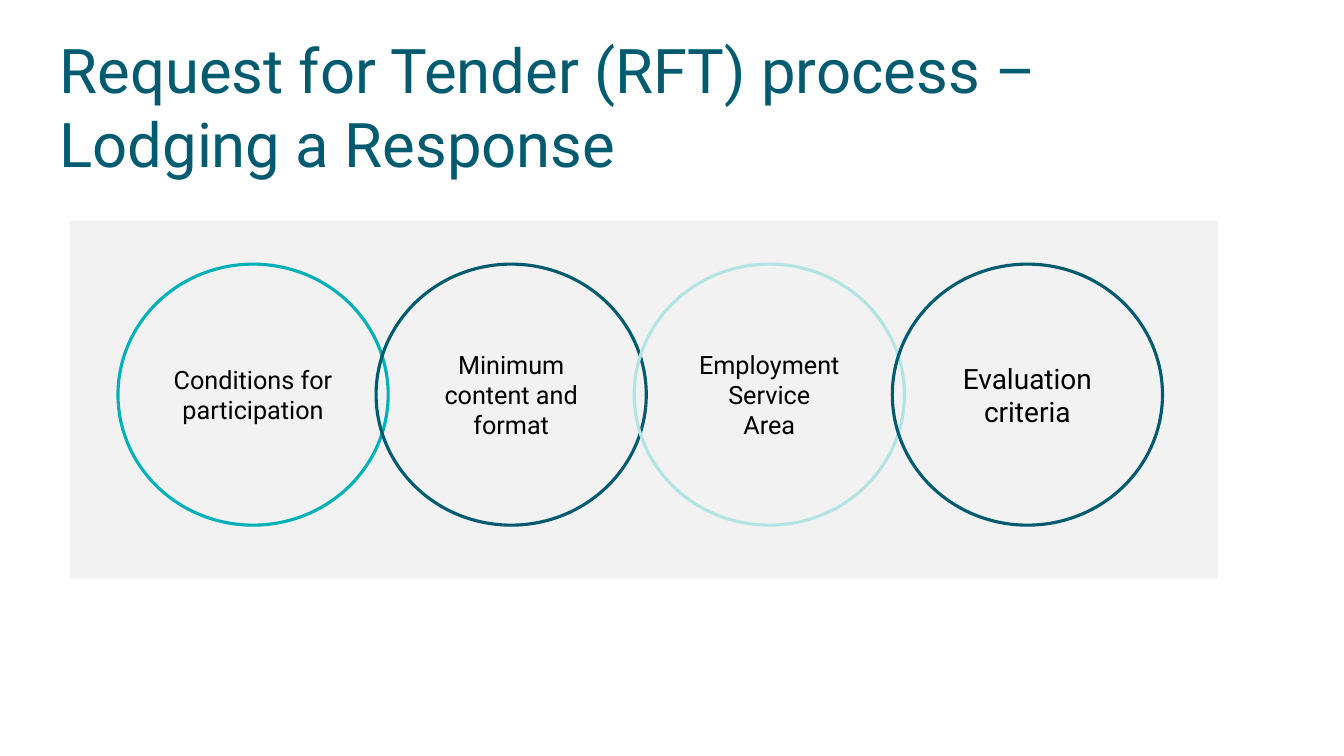
import pptx
import pptx.util
import pptx.dml.color
import pptx.enum.shapes
import pptx.enum.text
from pptx.util import Inches

# Content
TITLE = "Request for Tender (RFT) process – Lodging a Response"
REQUIREMENTS = [  # paragraphs, outline colour, text size
    (["Conditions for participation"], "teal", "label"),
    (["Minimum content and format"], "navy", "label"),
    (["Employment Service", "Area"], "mint", "label"),
    (["Evaluation criteria"], "navy", "label_large"),
]

THEME = {
    "font": "Roboto",
    "colors": {"navy": "005A70", "teal": "00B0B9", "mint": "B1E4E3",
               "panel": "F2F2F2", "text": "000000"},
    "sizes": {"title": 44, "label": 18, "label_large": 20, "outline": 2.25},
}

# Ring chain geometry, in inches
RING_LEFT, RING_TOP, RING_PITCH = 1.17, 2.62, 2.56
RING_WIDTH, RING_HEIGHT = 2.68, 2.59


def color(name):
    return pptx.dml.color.RGBColor.from_string(THEME["colors"][name])


def size(name):
    return pptx.util.Pt(THEME["sizes"][name])


def set_insets(frame, horizontal, vertical):
    frame.margin_left = frame.margin_right = Inches(horizontal)
    frame.margin_top = frame.margin_bottom = Inches(vertical)


def style_paragraph(paragraph, size_name, color_name, alignment):
    paragraph.alignment = alignment
    paragraph.font.name = THEME["font"]
    paragraph.font.size = size(size_name)
    paragraph.font.color.rgb = color(color_name)


def add_panel(slide):
    panel = slide.shapes.add_shape(
        pptx.enum.shapes.MSO_SHAPE.RECTANGLE,
        Inches(0.69), Inches(2.19), Inches(11.39), Inches(3.55))
    panel.shadow.inherit = False
    panel.fill.solid()
    panel.fill.fore_color.rgb = color("panel")
    panel.line.fill.background()


def format_title(title):
    title.left, title.top = Inches(0.59), Inches(0.3)
    title.width, title.height = Inches(11.49), Inches(1.48)
    frame = title.text_frame
    frame.text = TITLE
    frame.word_wrap = True
    frame.auto_size = pptx.enum.text.MSO_AUTO_SIZE.NONE
    frame.vertical_anchor = pptx.enum.text.MSO_ANCHOR.BOTTOM
    set_insets(frame, 0, 0)
    style_paragraph(frame.paragraphs[0], "title", "navy",
                    pptx.enum.text.PP_ALIGN.LEFT)


def add_ring(slide, index, lines, outline, label_size):
    ring = slide.shapes.add_shape(
        pptx.enum.shapes.MSO_SHAPE.OVAL,
        Inches(RING_LEFT + index * RING_PITCH), Inches(RING_TOP),
        Inches(RING_WIDTH), Inches(RING_HEIGHT))
    ring.shadow.inherit = False
    ring.fill.background()
    ring.line.color.rgb = color(outline)
    ring.line.width = size("outline")
    frame = ring.text_frame
    frame.text = "\n".join(lines)
    frame.word_wrap = True
    frame.vertical_anchor = pptx.enum.text.MSO_ANCHOR.MIDDLE
    set_insets(frame, 0.04, 0.05)
    for paragraph in frame.paragraphs:
        style_paragraph(paragraph, label_size, "text",
                        pptx.enum.text.PP_ALIGN.CENTER)


def main():
    deck = pptx.Presentation()
    deck.slide_width, deck.slide_height = Inches(13.33), Inches(7.5)
    slide = deck.slides.add_slide(deck.slide_layouts.get_by_name("Title Only"))

    # Heading and background panel
    format_title(slide.shapes.title)
    add_panel(slide)

    # Chain of overlapping rings
    for index, requirement in enumerate(REQUIREMENTS):
        add_ring(slide, index, *requirement)

    deck.save("out.pptx")


if __name__ == "__main__":
    main()
